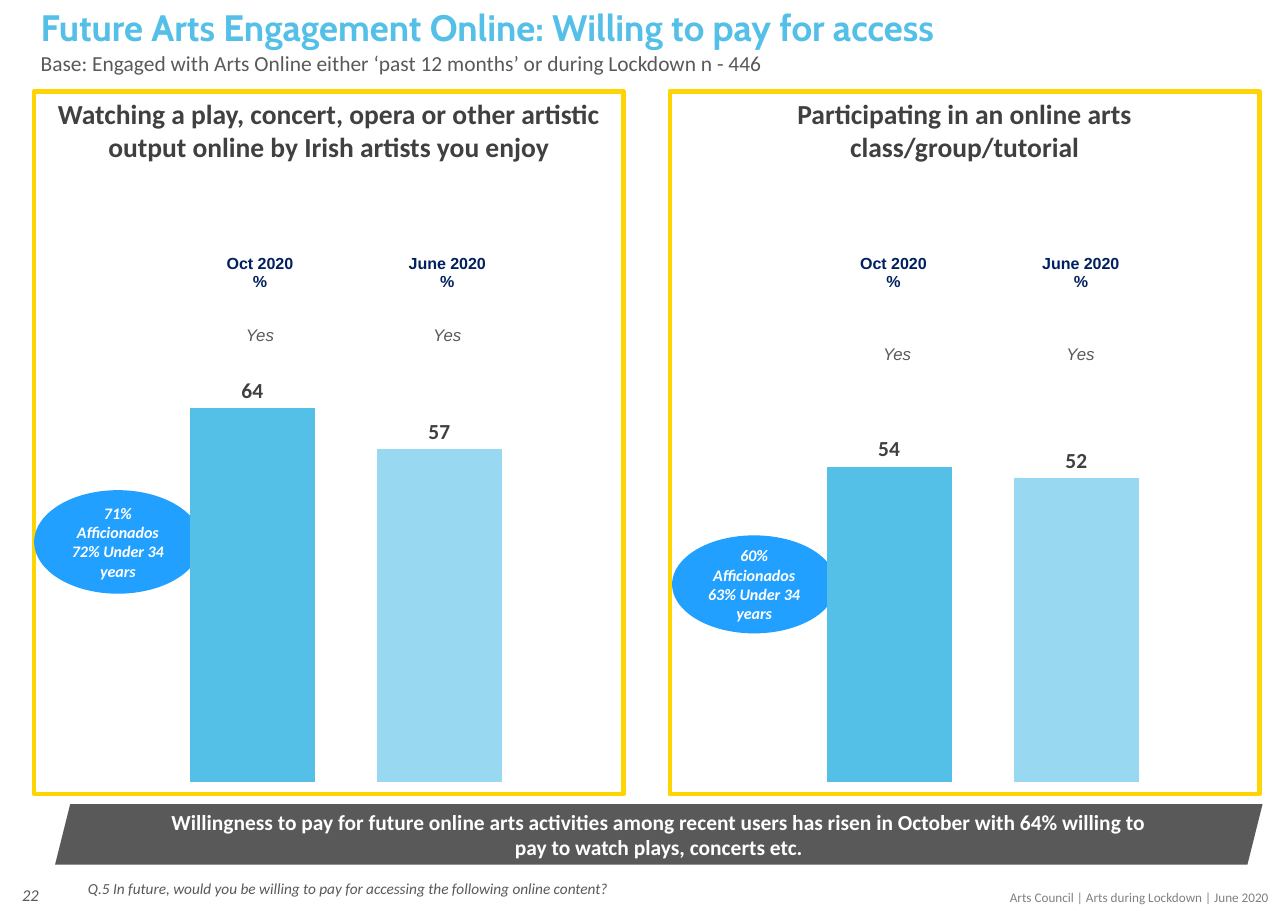
from lxml.etree import SubElement
from pptx import Presentation
from pptx.chart.data import CategoryChartData
from pptx.dml.color import RGBColor
from pptx.enum.chart import XL_CHART_TYPE, XL_LABEL_POSITION
from pptx.enum.shapes import MSO_SHAPE
from pptx.enum.text import MSO_ANCHOR, PP_ALIGN
from pptx.oxml import parse_xml
from pptx.oxml.ns import nsdecls, qn
from pptx.util import Inches, Pt

# Content
TITLE = "Future Arts Engagement Online: Willing to pay for access"
BASE = "Base: Engaged with Arts Online either ‘past 12 months’ or during Lockdown n - 446"
QUESTION = "Q.5 In future, would you be willing to pay for accessing the following online content?"
FOOTER = "Arts Council | Arts during Lockdown | June 2020"
PAGE = "22"
TAKEAWAY = ("Willingness to pay for future online arts activities among recent users has risen "
            "in October with 64% willing to pay to watch plays, concerts etc.")
WAVES = [("Oct 2020", "%"), ("June 2020", "%")]
ANSWERS = [("Yes",), ("Yes",)]
PANELS = [
    {
        "heading": "Watching a play, concert, opera or other artistic output online by Irish artists you enjoy",
        "values": (64, 57),
        "callout": ("71% Afficionados", "72% Under 34 years"),
        "frame_left": 0.31, "chart_left": 1.37,
        "callout_box": (0.31, 4.45, 1.52, 0.94),
        "waves_box": (1.51, 2.25, 3.4, 0.41),
        "answers_box": (1.51, 2.84, 3.4, 0.41),
    },
    {
        "heading": "Participating in an online arts class/group/tutorial",
        "values": (54, 52),
        "callout": ("60% Afficionados", "63% Under 34 years"),
        "frame_left": 6.08, "chart_left": 7.15,
        "callout_box": (6.1, 4.86, 1.49, 0.89),
        "waves_box": (7.26, 2.25, 3.4, 0.41),
        "answers_box": (7.31, 3.01, 3.33, 0.41),
    },
]

# Theme
THEME = {
    "frame": "FED402", "callout": "21A0FF", "banner": "595959",
    "bars": ("54C0E8", "98D9F1"),
    "title": {"name": "Cabin", "size": 24, "color": "54C0E8", "bold": True},
    "base": {"name": "Calibri", "size": 14, "color": "595959"},
    "question": {"name": "Calibri", "size": 10, "color": "595959", "italic": True},
    "footer": {"name": "Calibri", "size": 8.6, "color": "808080"},
    "page": {"name": "Calibri", "size": 10.8, "color": "595959", "italic": True},
    "heading": {"name": "Calibri", "size": 18, "color": "404040", "bold": True},
    "takeaway": {"name": "Calibri", "size": 14, "color": "FFFFFF", "bold": True},
    "callout_text": {"name": "Calibri", "size": 10.5, "color": "FFFFFF", "bold": True, "italic": True},
    "chart": {"name": "Calibri", "size": 10, "color": "000000"},
    "value": {"name": "Calibri", "size": 14, "color": "404040", "bold": True},
    "wave": {"name": "Arial", "size": 10.5, "color": "002060", "bold": True},
    "answer": {"name": "Arial", "size": 11, "color": "595959", "italic": True},
}
NO_TABLE_STYLE = "{2D5ABB26-0587-4C30-8999-92F81FD0307C}"
PLOT_LAYOUT = {"layoutTarget": "inner", "xMode": "edge", "yMode": "edge",
               "x": 0.02, "y": 0.02, "w": 0.96, "h": 0.96}

deck = Presentation()
deck.slide_width, deck.slide_height = Inches(11.69), Inches(8.27)
slide = deck.slides.add_slide(deck.slide_layouts[6])


def inches(box):
    return [Inches(length) for length in box]


def style_font(font, role):
    for attribute, value in THEME[role].items():
        if attribute == "color":
            font.color.rgb = RGBColor.from_string(value)
        else:
            setattr(font, attribute, Pt(value) if attribute == "size" else value)


def write(frame, lines, role, align=PP_ALIGN.CENTER, spacing=None):
    for index, line in enumerate(lines):
        paragraph = frame.add_paragraph() if index else frame.paragraphs[0]
        paragraph.alignment = align
        paragraph.line_spacing = spacing
        run = paragraph.add_run()
        run.text = line
        style_font(run.font, role)


def add_label(text, box, role, align=PP_ALIGN.LEFT, anchor=MSO_ANCHOR.TOP, spacing=None):
    frame = slide.shapes.add_textbox(*inches(box)).text_frame
    frame.word_wrap = True
    frame.vertical_anchor = anchor
    write(frame, [text], role, align, spacing)


def add_block(preset, box, lines, role, fill=None, line=None, anchor=MSO_ANCHOR.MIDDLE):
    block = slide.shapes.add_shape(preset, *inches(box))
    block.shadow.inherit = False
    for part, color in ((block.fill, fill), (block.line.fill, line)):
        if color:
            part.solid()
            part.fore_color.rgb = RGBColor.from_string(color)
        else:
            part.background()
    if line:
        block.line.width = Pt(3)
    block.text_frame.word_wrap = True
    block.text_frame.vertical_anchor = anchor
    write(block.text_frame, lines, role)
    return block


def add_bars(left, values):
    results = CategoryChartData()
    results.categories = ["1", "2"]
    results.add_series("Series 1", values)
    chart = slide.shapes.add_chart(
        XL_CHART_TYPE.COLUMN_CLUSTERED, *inches((left, 1.69, 3.54, 5.52)), results).chart
    chart.has_legend = chart.has_title = False
    style_font(chart.font, "chart")
    chart.category_axis.visible = chart.value_axis.visible = False
    chart.value_axis.has_major_gridlines = False
    chart.value_axis.minimum_scale, chart.value_axis.maximum_scale = 0, 100

    plot = chart.plots[0]
    plot.gap_width, plot.overlap, plot.vary_by_categories = 50, -27, False
    series = plot.series[0]
    for fill, color in zip((series.format.fill, series.points[1].format.fill), THEME["bars"]):
        fill.solid()
        fill.fore_color.rgb = RGBColor.from_string(color)
    plot.has_data_labels = True
    labels = plot.data_labels
    for attribute, value in {"show_value": True, "number_format": "0",
                             "number_format_is_linked": False,
                             "position": XL_LABEL_POSITION.OUTSIDE_END}.items():
        setattr(labels, attribute, value)
    style_font(labels.font, "value")

    # Clear background and fixed plot area
    chart_root = chart._chartSpace.find(qn("c:chart"))
    chart_root.addnext(parse_xml(
        f'<c:spPr {nsdecls("c", "a")}><a:noFill/><a:ln><a:noFill/></a:ln></c:spPr>'))
    plot_area = chart_root.find(qn("c:plotArea"))
    layout = plot_area.find(qn("c:layout"))
    if layout is None:
        layout = parse_xml(f'<c:layout {nsdecls("c")}/>')
        plot_area.insert(0, layout)
    manual = SubElement(layout, qn("c:manualLayout"))
    for tag, value in PLOT_LAYOUT.items():
        SubElement(manual, qn(f"c:{tag}")).set("val", str(value))


def add_row(box, cells, role):
    table = slide.shapes.add_table(1, len(cells), *inches(box)).table
    table.first_row = table.horz_banding = False
    table._tbl.tblPr[0].text = NO_TABLE_STYLE
    for cell, lines in zip(table.rows[0].cells, cells):
        cell.fill.background()
        cell.vertical_anchor = MSO_ANCHOR.MIDDLE
        write(cell.text_frame, lines, role)


# Title, base, question and footer
add_label(FOOTER, (7.71, 8.02, 3.91, 0.25), "footer", PP_ALIGN.RIGHT)
add_label(PAGE, (0, 7.9, 0.45, 0.44), "page", PP_ALIGN.RIGHT, MSO_ANCHOR.MIDDLE)
add_label(BASE, (0.27, 0.43, 10.45, 0.39), "base", spacing=0.9)
add_label(TITLE, (0.27, 0.04, 9.38, 0.45), "title", spacing=0.9)
add_label(QUESTION, (0.7, 7.86, 8.97, 0.34), "question", anchor=MSO_ANCHOR.BOTTOM, spacing=0.9)

# Takeaway banner
banner = add_block(MSO_SHAPE.PARALLELOGRAM, (0.5, 7.3, 10.96, 0.55), [TAKEAWAY],
                   "takeaway", fill=THEME["banner"])
for side in ("left", "top", "right", "bottom"):
    setattr(banner.text_frame, f"margin_{side}", 0)

# Panels
for panel in PANELS:
    add_block(MSO_SHAPE.RECTANGLE, (panel["frame_left"], 0.83, 5.35, 6.38), [panel["heading"]],
              "heading", line=THEME["frame"], anchor=MSO_ANCHOR.TOP)
    add_block(MSO_SHAPE.OVAL, panel["callout_box"], panel["callout"],
              "callout_text", fill=THEME["callout"])
    add_bars(panel["chart_left"], panel["values"])
    add_row(panel["waves_box"], WAVES, "wave")
    add_row(panel["answers_box"], ANSWERS, "answer")

deck.save("out.pptx")
